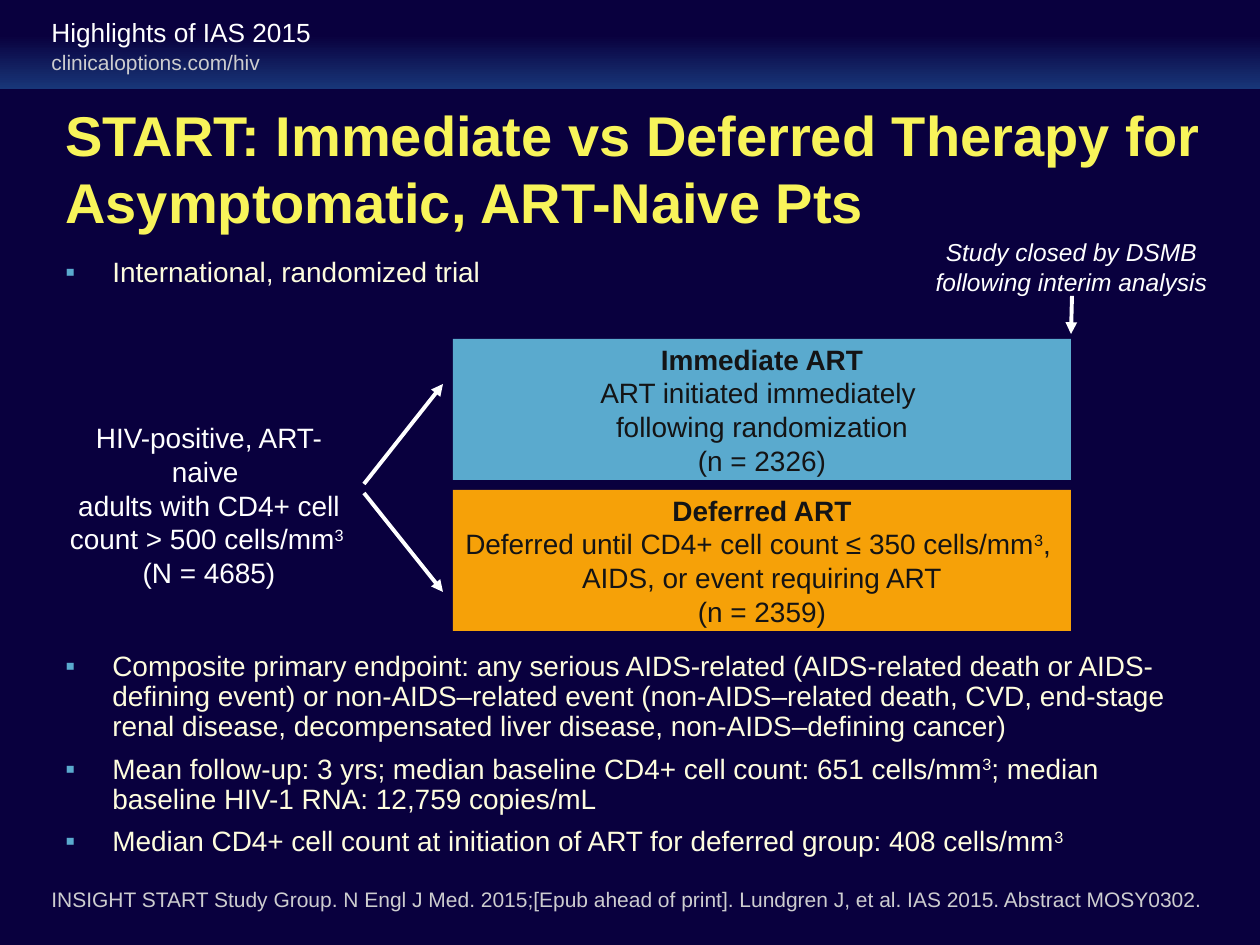
from pptx import Presentation
from pptx.dml.color import RGBColor
from pptx.enum.shapes import MSO_CONNECTOR, MSO_SHAPE
from pptx.enum.text import MSO_ANCHOR, PP_ALIGN
from pptx.oxml.ns import qn
from pptx.util import Emu, Pt
from lxml.etree import SubElement

NAVY = RGBColor(0x09, 0x00, 0x3E)
GLOW = RGBColor(0x18, 0x36, 0x78)
YELLOW = RGBColor(0xF8, 0xF4, 0x5A)
CREAM = RGBColor(0xFE, 0xFD, 0xDE)
WHITE = RGBColor(0xFF, 0xFF, 0xFF)
GREY = RGBColor(0xCD, 0xCD, 0xCF)
INK = RGBColor(0x14, 0x14, 0x15)
BLUE = RGBColor(0x5A, 0xAA, 0xCE)
ORANGE = RGBColor(0xF6, 0xA1, 0x08)

HEAD = ["Highlights of IAS 2015"]
SITE = ["clinicaloptions.com/hiv"]
TITLE = ["START: Immediate vs Deferred Therapy for Asymptomatic, ART-Naive Pts"]
INTRO = ["International, randomized trial"]
POINTS = [
    "Composite primary endpoint: any serious AIDS-related (AIDS-related death or "
    "AIDS-defining event) or non-AIDS–related event (non-AIDS–related death, CVD, "
    "end-stage renal disease, decompensated liver disease, non-AIDS–defining cancer)",
    "Mean follow-up: 3 yrs; median baseline CD4+ cell count: 651 cells/mm^3^; "
    "median baseline HIV-1 RNA: 12,759 copies/mL",
    "Median CD4+ cell count at initiation of ART for deferred group: 408 cells/mm^3^",
]
GROUP = ["HIV-positive, ART-naive ", "adults with CD4+ cell",
         "count > 500 cells/mm^3 ^", "(N = 4685)"]
CLOSED = ["Study closed by DSMB", "following interim analysis"]
SOURCE = ["INSIGHT START Study Group. N Engl J Med. 2015;[Epub ahead of print]. "
          "Lundgren J, et al. IAS 2015. Abstract MOSY0302."]
ARMS = [
    (BLUE, ["Immediate ART", "ART initiated immediately ",
            "following randomization", "(n = 2326)"]),
    (ORANGE, ["Deferred ART", "Deferred until CD4+ cell count ≤ 350 cells/mm^3^, ",
              "AIDS, or event requiring ART", "(n = 2359)"]),
]
ARROWS = [(1072, 296, 1071, 334), (364, 493, 443, 592), (364, 484, 443, 384)]


def px(n):
    return Emu(round(n * 914400 / 126))


def write(shape, lines, size=16, color=WHITE, bold=False, italic=False, head=False,
          align=PP_ALIGN.LEFT, anchor=MSO_ANCHOR.TOP, wrap=True, bullet=False):
    frame = shape.text_frame
    frame.word_wrap = wrap
    frame.vertical_anchor = anchor
    for i, line in enumerate(lines):
        para = frame.paragraphs[0] if i == 0 else frame.add_paragraph()
        para.alignment = align
        if bullet:
            para.line_spacing = 0.9
            para.space_after = Pt(7)
            props = para._p.get_or_add_pPr()
            props.set("marL", str(px(47)))
            props.set("indent", str(px(-47)))
            tint = SubElement(props, qn("a:buClr"))
            SubElement(tint, qn("a:srgbClr")).set("val", str(BLUE))
            SubElement(props, qn("a:buFont")).set("typeface", "Arial")
            SubElement(props, qn("a:buChar")).set("char", "▪")
        for j, part in enumerate(line.split("^")):
            if not part:
                continue
            run = para.add_run()
            run.text = part
            font = run.font
            font.name = "Arial"
            font.size = Pt(size)
            font.color.rgb = color
            font.bold = bold or (head and i == 0)
            font.italic = italic
            if j % 2:
                run._r.get_or_add_rPr().set("baseline", "30000")


def label(box, lines, **style):
    write(slide.shapes.add_textbox(*map(px, box)), lines, **style)


def block(box):
    shape = slide.shapes.add_shape(MSO_SHAPE.RECTANGLE, *map(px, box))
    shape.shadow.inherit = False
    shape.line.fill.background()
    return shape


deck = Presentation()
deck.slide_width, deck.slide_height = px(1260), px(945)
slide = deck.slides.add_slide(deck.slide_layouts[6])
slide.background.fill.solid()
slide.background.fill.fore_color.rgb = NAVY

band = block((0, 0, 1260, 89)).fill
band.gradient()
band.gradient_angle = 90
for stop, color, place in zip(band.gradient_stops, (GLOW, NAVY), (0, 0.6)):
    stop.color.rgb = color
    stop.position = place

MID = MSO_ANCHOR.MIDDLE
label((39, 43, 236, 38), SITE, size=12, color=GREY, wrap=False)
label((39, 10, 988, 44), HEAD, size=15)
label((53, 92, 1167, 152), TITLE, size=32, color=YELLOW, bold=True, anchor=MID)
label((53, 252, 800, 50), INTRO, color=CREAM, bullet=True)
label((53, 646, 1166, 230), POINTS, color=CREAM, bullet=True)

for i, (color, lines) in enumerate(ARMS):
    arm = block((453, 339 + 151 * i, 618, 141))
    arm.fill.solid()
    arm.fill.fore_color.rgb = color
    write(arm, lines, color=INK, head=True, align=PP_ALIGN.CENTER, anchor=MID, wrap=False)

label((39, 880, 1179, 38), SOURCE, size=12, color=GREY, anchor=MSO_ANCHOR.BOTTOM)
label((55, 411, 308, 188), GROUP, align=PP_ALIGN.CENTER, anchor=MID, wrap=False)
label((922, 231, 299, 72), CLOSED, size=14, italic=True, align=PP_ALIGN.CENTER, wrap=False)

for ends in ARROWS:
    arrow = slide.shapes.add_connector(MSO_CONNECTOR.STRAIGHT, *map(px, ends))
    arrow.line.color.rgb = WHITE
    arrow.line.width = Pt(2.25)
    SubElement(arrow.line._get_or_add_ln(), qn("a:tailEnd")).set("type", "triangle")
    SubElement(arrow._element.spPr, qn("a:effectLst"))

deck.save("out.pptx")
